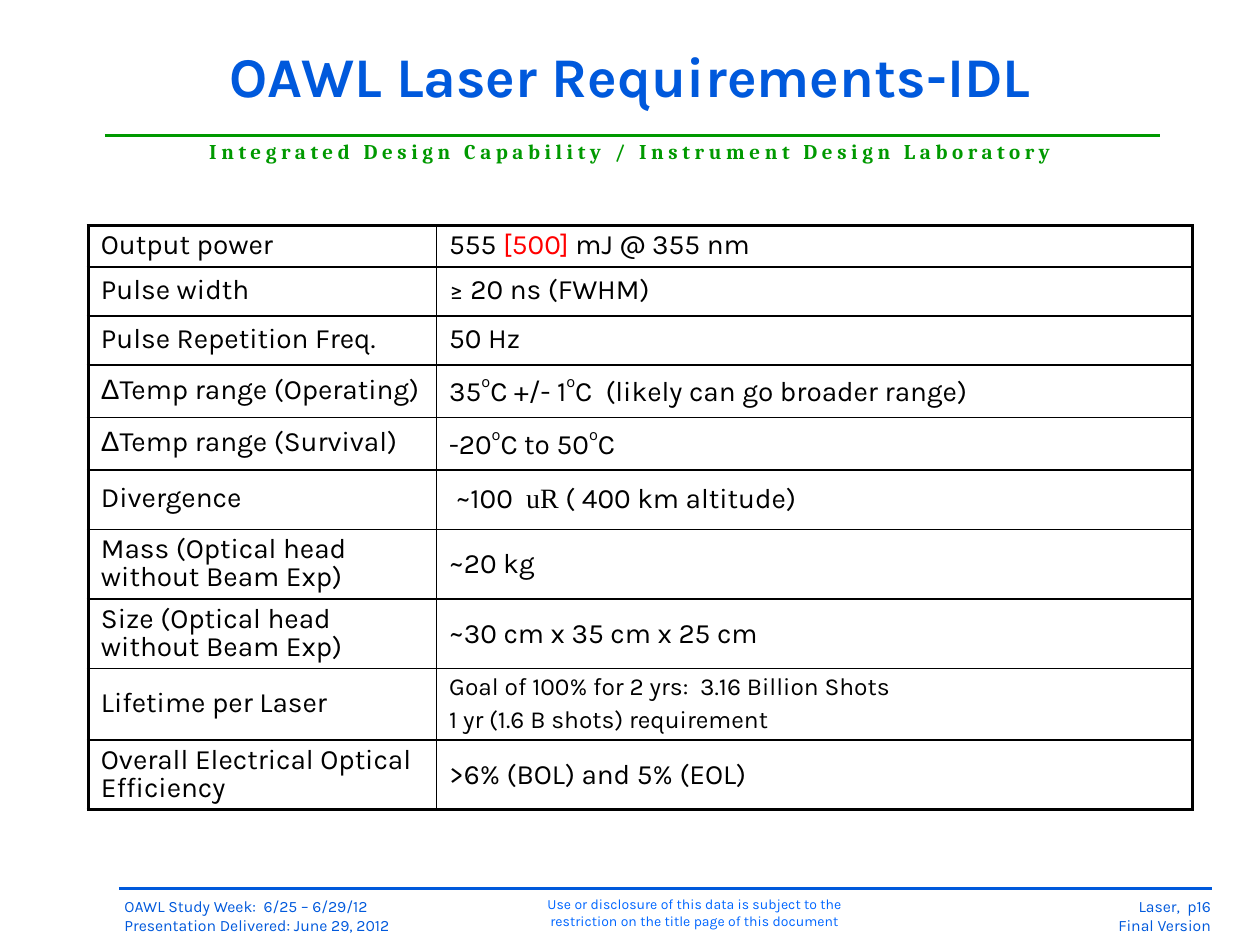
from lxml.etree import SubElement
from pptx import Presentation
from pptx.dml.color import RGBColor
from pptx.enum.shapes import MSO_CONNECTOR
from pptx.enum.text import MSO_ANCHOR, PP_ALIGN
from pptx.oxml.ns import qn
from pptx.util import Pt

BLUE, BRIGHT_BLUE, GREEN, RED, BLACK = "0059DC", "0066FF", "009900", "FF0000", "000000"
BODY_FONT = "Karla"
TIGHT, SINGLE = 0.85, 1.0

TITLE = "OAWL Laser Requirements-IDL"
SUBTITLE = "Integrated Design Capability / Instrument Design Laboratory"
STUDY = ["OAWL Study Week:  6/25 – 6/29/12", "Presentation Delivered: June 29, 2012"]
DISCLOSURE = ["Use or disclosure of this data is subject to the "
              "restriction on the title page of this document"]
PAGE = ["Laser,  p16", "Final Version"]

# Run styles inside table cells
DEGREE = ("o", "superscript")
DELTA = ("Δ", "symbol")

# Row height, label runs, value paragraphs, value size, value line spacing
REQUIREMENTS = [
    (23, ["Output power"], [["555 ", ("[500]", "changed"), " mJ @ 355 nm"]], 16, TIGHT),
    (28, ["Pulse width"], [["≥ 20 ns (FWHM)"]], 16, TIGHT),
    (28, ["Pulse Repetition Freq."], [["50 Hz"]], 16, TIGHT),
    (30, [DELTA, "Temp range (Operating)"],
     [["35", DEGREE, "C +/- 1", DEGREE, "C  (likely can go broader range)"]], 16, SINGLE),
    (30, [DELTA, "Temp range (Survival)"],
     [["-20", DEGREE, "C to 50", DEGREE, "C"]], 16, SINGLE),
    (34, ["Divergence"], [[" ~100  ", ("uR", "serif"), " ( 400 km altitude)"]], 16, SINGLE),
    (39, ["Mass (Optical head without Beam Exp)"], [["~20 kg"]], 16, SINGLE),
    (39, ["Size (Optical head without Beam Exp)"], [["~30 cm x 35 cm x 25 cm"]], 16, SINGLE),
    (40, ["Lifetime per Laser"],
     [["Goal of 100% for 2 yrs:  3.16 Billion Shots"], ["1 yr (1.6 B shots) requirement"]],
     14, TIGHT),
    (38, ["Overall Electrical Optical Efficiency"], [[">6% (BOL) and 5% (EOL)"]], 16, SINGLE),
]
COLUMN_WIDTHS = [199, 432]
TABLE_LEFT, TABLE_TOP = 50.5, 129
THICK, THIN = 2.25, 1


def color(hex_string):
    return RGBColor.from_string(hex_string)


def set_font(font, size, hex_color, name=BODY_FONT, bold=False):
    font.size, font.name, font.bold = Pt(size), name, bold
    font.color.rgb = color(hex_color)


def add_text(slide, box, lines, size, hex_color, align=PP_ALIGN.LEFT, wrap=True,
             name=BODY_FONT, bold=False):
    frame = slide.shapes.add_textbox(*map(Pt, box)).text_frame
    frame.word_wrap = wrap
    frame.text = "\n".join(lines)
    for paragraph in frame.paragraphs:
        paragraph.alignment = align
        set_font(paragraph.font, size, hex_color, name, bold)
    return frame


def add_rule(slide, left, right, y, hex_color):
    rule = slide.shapes.add_connector(MSO_CONNECTOR.STRAIGHT, Pt(left), Pt(y), Pt(right), Pt(y))
    rule.line.color.rgb = color(hex_color)
    rule.line.width = Pt(1.5)
    SubElement(rule._element.spPr, qn("a:effectLst"))


def style_run(run, style):
    if style == "superscript":
        run.font._element.set("baseline", "50000")
    elif style == "changed":
        run.font.color.rgb = color(RED)
    else:
        run.font.name = {"symbol": "Arial", "serif": "Times New Roman"}[style]


def set_borders(cell, widths):
    """Draw black borders; widths are left, right, top, bottom."""
    properties = cell._tc.get_or_add_tcPr()
    for side, width in zip("LRTB", widths):
        line = SubElement(properties, qn(f"a:ln{side}"), w=str(Pt(width)))
        fill = SubElement(line, qn("a:solidFill"))
        SubElement(fill, qn("a:srgbClr"), val=BLACK)


def fill_cell(cell, paragraphs, size, spacing):
    cell.fill.background()
    cell.vertical_anchor = MSO_ANCHOR.MIDDLE
    frame = cell.text_frame
    for index, runs in enumerate(paragraphs):
        paragraph = frame.add_paragraph() if index else frame.paragraphs[0]
        paragraph.line_spacing = spacing
        if index:
            paragraph.space_before = Pt(5)
        for item in runs:
            text, style = (item, None) if isinstance(item, str) else item
            run = paragraph.add_run()
            run.text = text
            set_font(run.font, size, BLACK)
            if style:
                style_run(run, style)


def add_requirements_table(slide):
    heights = [row[0] for row in REQUIREMENTS]
    table = slide.shapes.add_table(
        len(heights), 2, Pt(TABLE_LEFT), Pt(TABLE_TOP),
        Pt(sum(COLUMN_WIDTHS)), Pt(sum(heights))).table
    table.first_row = table.horz_banding = False
    for column, width in zip(table.columns, COLUMN_WIDTHS):
        column.width = Pt(width)
    last = len(heights) - 1
    for index, (height, label, value, size, spacing) in enumerate(REQUIREMENTS):
        table.rows[index].height = Pt(height)
        top = THICK if index == 0 else THIN
        bottom = THICK if index == last else THIN
        label_cell, value_cell = table.cell(index, 0), table.cell(index, 1)
        set_borders(label_cell, (THICK, THIN, top, bottom))
        set_borders(value_cell, (THIN, THICK, top, bottom))
        fill_cell(label_cell, [label], 16, TIGHT)
        fill_cell(value_cell, value, size, spacing)


def main():
    presentation = Presentation()
    presentation.slide_width, presentation.slide_height = Pt(720), Pt(540)
    slide = presentation.slides.add_slide(presentation.slide_layouts[6])

    subtitle = add_text(slide, (82.8, 75.6, 555, 21.6), [SUBTITLE], 12, GREEN,
                        PP_ALIGN.CENTER, name="Cambria", bold=True)
    subtitle.paragraphs[0].runs[0].font._element.set("spc", "264")
    add_rule(slide, 68, 692.6, 507.6, BLUE)
    add_rule(slide, 60, 663, 77.5, GREEN)
    add_text(slide, (298, 508.3, 198, 26.6), DISCLOSURE, 8, BRIGHT_BLUE, PP_ALIGN.CENTER)
    add_text(slide, (64, 509, 170.6, 30), STUDY, 9, BLUE, wrap=False)
    add_text(slide, (632, 509, 67, 29), PAGE, 9, BLUE, PP_ALIGN.RIGHT, wrap=False)

    title = add_text(slide, (33.8, 14.4, 653, 62.6), [TITLE], 32, BLUE,
                     PP_ALIGN.CENTER, bold=True)
    title.vertical_anchor = MSO_ANCHOR.MIDDLE
    title.paragraphs[0].line_spacing = TIGHT
    add_requirements_table(slide)

    presentation.save("out.pptx")


if __name__ == "__main__":
    main()
